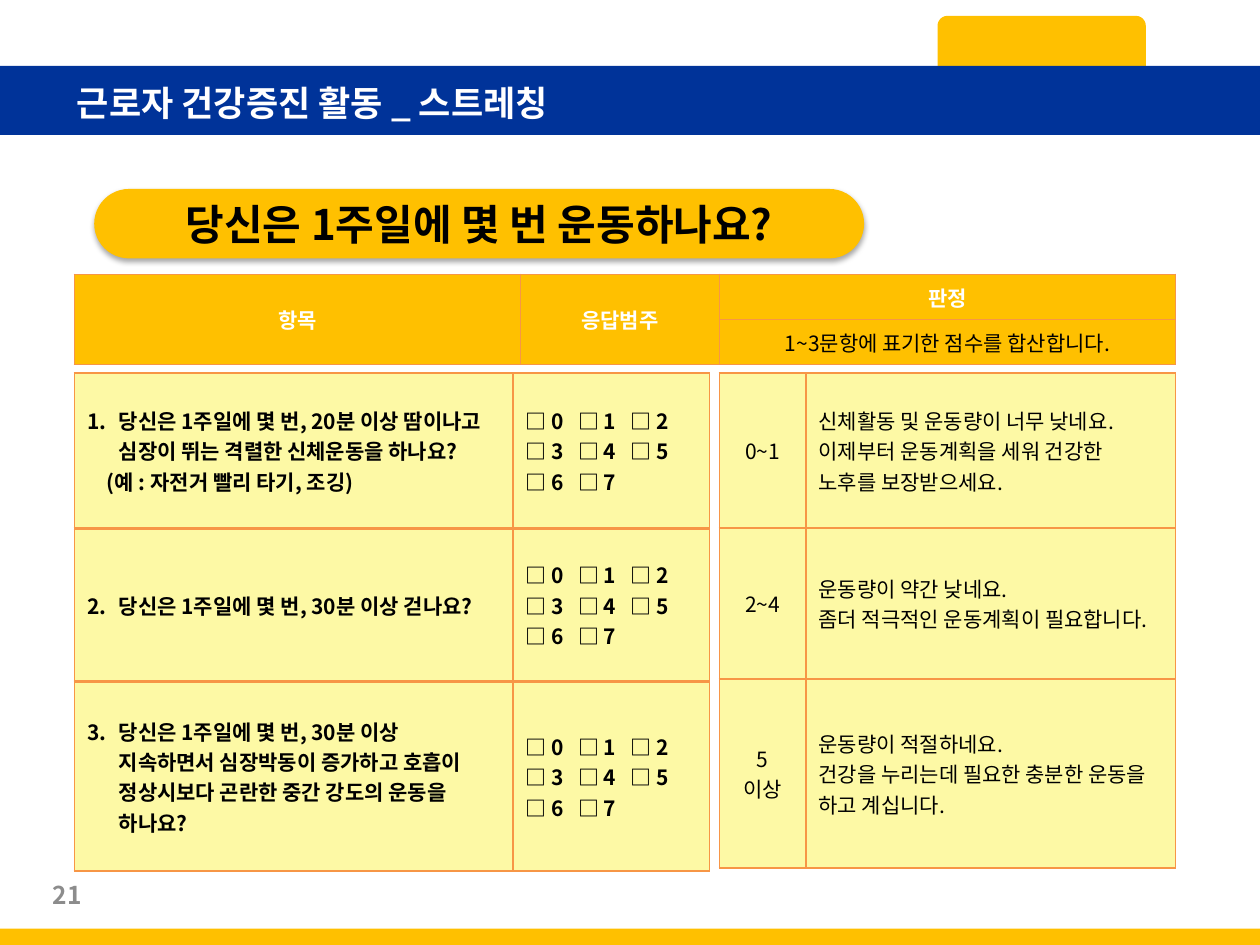
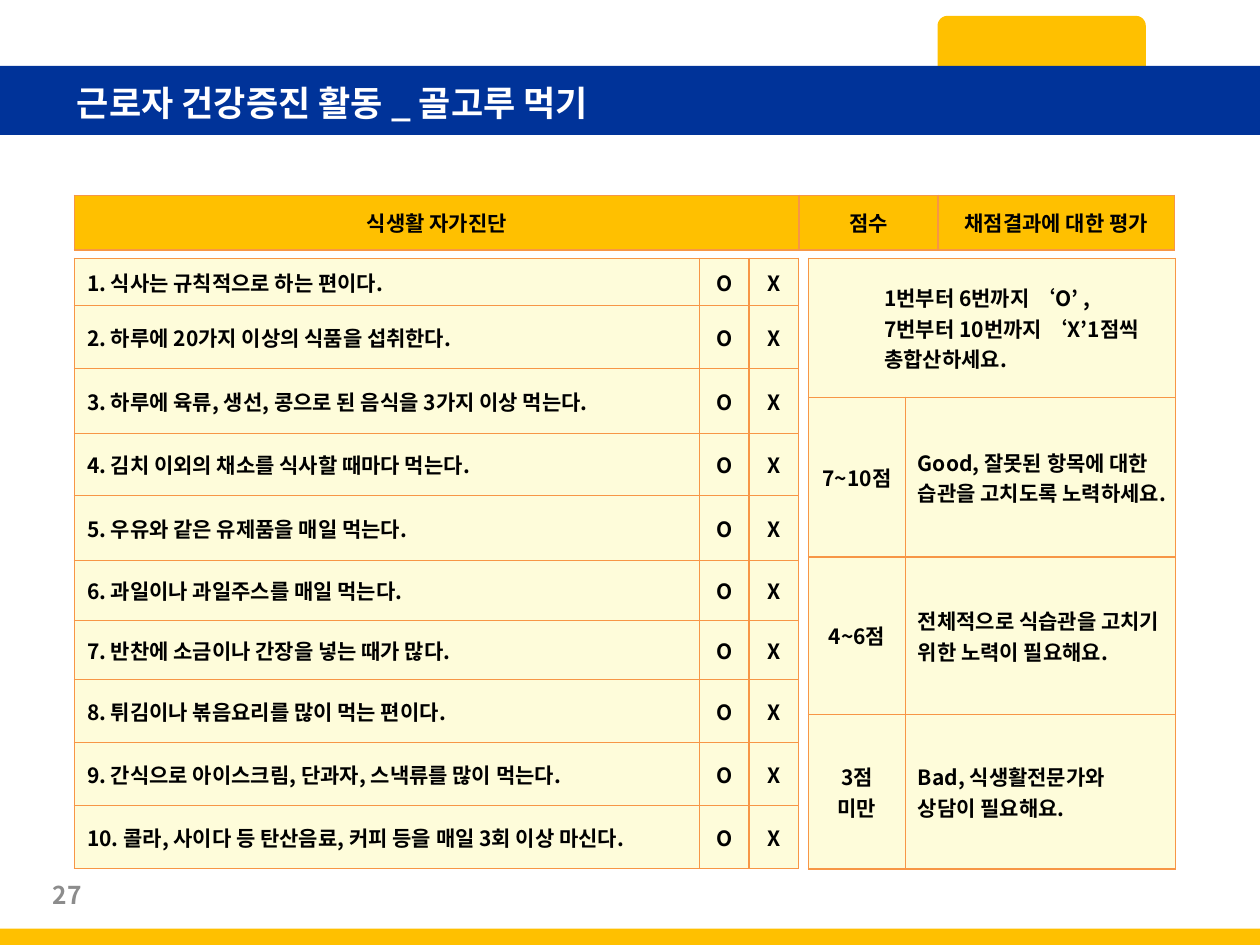
from lxml.etree import SubElement
from pptx import Presentation
from pptx.dml.color import RGBColor
from pptx.enum.shapes import MSO_SHAPE
from pptx.enum.text import MSO_ANCHOR, PP_ALIGN
from pptx.oxml.ns import qn
from pptx.util import Cm, Pt

FONT = "Noto Sans CJK KR"
GOLD = RGBColor(0xFF, 0xC0, 0x00)
NAVY = RGBColor(0x00, 0x33, 0x99)
ORANGE = RGBColor(0xF7, 0x96, 0x46)
YELLOW = RGBColor(0xFD, 0xF9, 0xA5)
CREAM = RGBColor(0xFE, 0xFC, 0xDA)
GRAY = RGBColor(0x8C, 0x8C, 0x8C)
WHITE = RGBColor(0xFF, 0xFF, 0xFF)
BLACK = RGBColor(0x00, 0x00, 0x00)
LEFT = PP_ALIGN.LEFT
CENTER = PP_ALIGN.CENTER


def write(frame, text, size=12, color=BLACK, bold=True, align=LEFT,
          indent=0, number=None, tab_stops=()):
    frame.word_wrap = True
    for index, line in enumerate(text.split("\n")):
        paragraph = frame.paragraphs[0] if index == 0 else frame.add_paragraph()
        paragraph.alignment = align
        properties = paragraph._p.get_or_add_pPr()
        if number and index == 0:
            properties.set("marL", str(Cm(0.64)))
            properties.set("indent", str(-Cm(0.64)))
            SubElement(properties, qn("a:buAutoNum"), type="arabicPeriod", startAt=str(number))
        elif indent:
            properties.set("marL", str(Cm(indent)))
            properties.set("indent", "0")
        if tab_stops:
            stops = SubElement(properties, qn("a:tabLst"))
            for stop in tab_stops:
                SubElement(stops, qn("a:tab"), pos=str(Cm(stop)), algn="l")
        run = paragraph.add_run()
        run.text = line
        run.font.size = Pt(size)
        run.font.bold = bold
        run.font.color.rgb = color
        run.font.name = FONT
        SubElement(run._r.get_or_add_rPr(), qn("a:ea"), typeface=FONT)


def add_grid(slide, left, top, widths, heights, rows, fill, **shared):
    grid = slide.shapes.add_table(len(heights), len(widths), Cm(left), Cm(top),
                                  Cm(sum(widths)), Cm(sum(heights))).table
    grid.first_row = grid.horz_banding = False
    for column, width in zip(grid.columns, widths):
        column.width = Cm(width)
    for row, height in zip(grid.rows, heights):
        row.height = Cm(height)
    for row_index, entries in enumerate(rows):
        for column_index, entry in enumerate(entries):
            text, changes = entry if isinstance(entry, tuple) else (entry, {})
            cell = grid.cell(row_index, column_index)
            cell.vertical_anchor = MSO_ANCHOR.MIDDLE
            borders = cell._tc.get_or_add_tcPr()
            for side in ("a:lnL", "a:lnR", "a:lnT", "a:lnB"):
                border = SubElement(borders, qn(side), w=str(Pt(1)))
                ink = SubElement(border, qn("a:solidFill"))
                SubElement(ink, qn("a:srgbClr"), val=str(ORANGE))
            cell.fill.solid()
            cell.fill.fore_color.rgb = fill
            write(cell.text_frame, text, **{**shared, **changes})
    return grid


deck = Presentation()
deck.slide_width = Cm(25.4)
deck.slide_height = Cm(19.05)

pages = []
for topic, page_number in (("스트레칭", "21"), ("골고루 먹기", "27")):
    slide = deck.slides.add_slide(deck.slide_layouts[6])
    pages.append(slide)
    for preset, left, top, width, height, color in (
        (MSO_SHAPE.ROUNDED_RECTANGLE, 18.9, 0.32, 4.2, 1.2, GOLD),
        (MSO_SHAPE.RECTANGLE, 0, 1.33, 25.4, 1.39, NAVY),
        (MSO_SHAPE.RECTANGLE, 0, 18.72, 25.4, 0.33, GOLD),
    ):
        band = slide.shapes.add_shape(preset, Cm(left), Cm(top), Cm(width), Cm(height))
        band.shadow.inherit = False
        band.fill.solid()
        band.fill.fore_color.rgb = color
        band.line.fill.background()
    title = slide.shapes.add_textbox(Cm(1.3), Cm(1.52), Cm(19), Cm(1.12))
    write(title.text_frame, f"근로자 건강증진 활동 _ {topic}", size=20, color=WHITE)
    folio = slide.shapes.add_textbox(Cm(0.3), Cm(17.53), Cm(1.6), Cm(1.02))
    folio.text_frame.vertical_anchor = MSO_ANCHOR.MIDDLE
    write(folio.text_frame, page_number, size=14, color=GRAY, align=PP_ALIGN.RIGHT)

stretching, diet = pages
centered = {"align": CENTER}

exercise_header = add_grid(
    stretching, 1.5, 5.53, [8.99, 4.01, 9.2], [0.91, 0.91],
    [["항목", "응답범주", "판정"],
     ["", "", ("1~3문항에 표기한 점수를 합산합니다.", {"color": BLACK, "bold": False})]],
    GOLD, color=WHITE, align=CENTER)
for column_index in (0, 1):
    exercise_header.cell(0, column_index).merge(exercise_header.cell(1, column_index))

question_heights = [3.12, 3.05, 3.81]
add_grid(
    stretching, 14.5, 7.52, [1.75, 7.45], question_heights,
    [[("0~1", centered),
      "신체활동 및 운동량이 너무 낮네요.\n이제부터 운동계획을 세워 건강한 노후를 보장받으세요."],
     [("2~4", centered),
      "운동량이 약간 낮네요.\n좀더 적극적인 운동계획이 필요합니다."],
     [("5\n이상", centered),
      "운동량이 적절하네요.\n건강을 누리는데 필요한 충분한 운동을 하고 계십니다."]],
    YELLOW, bold=False)

exercise_questions = [
    "당신은 1주일에 몇 번, 20분 이상 땀이나고 심장이 뛰는 격렬한 신체운동을 하나요?\n"
    "(예 : 자전거 빨리 타기, 조깅)",
    "당신은 1주일에 몇 번, 30분 이상 걷나요?",
    "당신은 1주일에 몇 번, 30분 이상 지속하면서 심장박동이 증가하고 호흡이 "
    "정상시보다 곤란한 중간 강도의 운동을 하나요?",
]
day_choices = ("□ 0\t□ 1\t□ 2\n□ 3\t□ 4\t□ 5\n□ 6\t□ 7", {"tab_stops": (1.06, 2.12)})
question_top = 7.52
for number, (question, height) in enumerate(zip(exercise_questions, question_heights), 1):
    add_grid(stretching, 1.5, question_top, [8.84, 3.96], [height],
             [[(question, {"number": number, "indent": 0.4}), day_choices]], YELLOW)
    question_top += height + 0.03

headline = stretching.shapes.add_shape(
    MSO_SHAPE.ROUNDED_RECTANGLE, Cm(1.9), Cm(3.81), Cm(15.52), Cm(1.4))
headline.adjustments[0] = 0.5
headline.fill.solid()
headline.fill.fore_color.rgb = GOLD
headline.line.fill.background()
headline.shadow.inherit = False
effects = headline._element.spPr.find(qn("a:effectLst"))
drop = SubElement(effects, qn("a:outerShdw"), blurRad=str(Pt(3.1)), dist=str(Pt(1.8)),
                  dir="5400000", rotWithShape="0")
shade = SubElement(drop, qn("a:srgbClr"), val=str(BLACK))
SubElement(shade, qn("a:alpha"), val="35000")
headline.text_frame.vertical_anchor = MSO_ANCHOR.MIDDLE
write(headline.text_frame, "당신은 1주일에 몇 번 운동하나요?", size=24, align=CENTER)

add_grid(diet, 1.5, 3.94, [14.61, 2.8, 4.77], [1.1],
         [["식생활 자가진단", "점수", "채점결과에 대한 평가"]], GOLD, align=CENTER)

diet_habits = [
    "식사는 규칙적으로 하는 편이다.",
    "하루에 20가지 이상의 식품을 섭취한다.",
    "하루에 육류, 생선, 콩으로 된 음식을 3가지 이상 먹는다.",
    "김치 이외의 채소를 식사할 때마다 먹는다.",
    "우유와 같은 유제품을 매일 먹는다.",
    "과일이나 과일주스를 매일 먹는다.",
    "반찬에 소금이나 간장을 넣는 때가 많다.",
    "튀김이나 볶음요리를 많이 먹는 편이다.",
    "간식으로 아이스크림, 단과자, 스낵류를 많이 먹는다.",
    "콜라, 사이다 등 탄산음료, 커피 등을 매일 3회 이상 마신다.",
]
add_grid(diet, 1.5, 5.21, [12.6, 1, 1],
         [0.95, 1.27, 1.31, 1.25, 1.31, 1.21, 1.19, 1.27, 1.27, 1.27],
         [[f"{number}. {habit}", ("O", centered), ("X", centered)]
          for number, habit in enumerate(diet_habits, 1)], CREAM)

diet_scores = add_grid(
    diet, 16.3, 5.21, [1.95, 5.45], [2.8, 3.22, 3.17, 3.12],
    [[("1번부터 6번까지 ‘O’ ,\n7번부터 10번까지 ‘X’1점씩\n총합산하세요.", {"indent": 1.27}), ""],
     [("7~10점", centered), "Good, 잘못된 항목에 대한 습관을 고치도록 노력하세요."],
     [("4~6점", centered), "전체적으로 식습관을 고치기 위한 노력이 필요해요."],
     [("3점 미만", centered), "Bad, 식생활전문가와 상담이 필요해요."]], CREAM)
diet_scores.cell(0, 0).merge(diet_scores.cell(0, 1))

deck.save("out.pptx")
